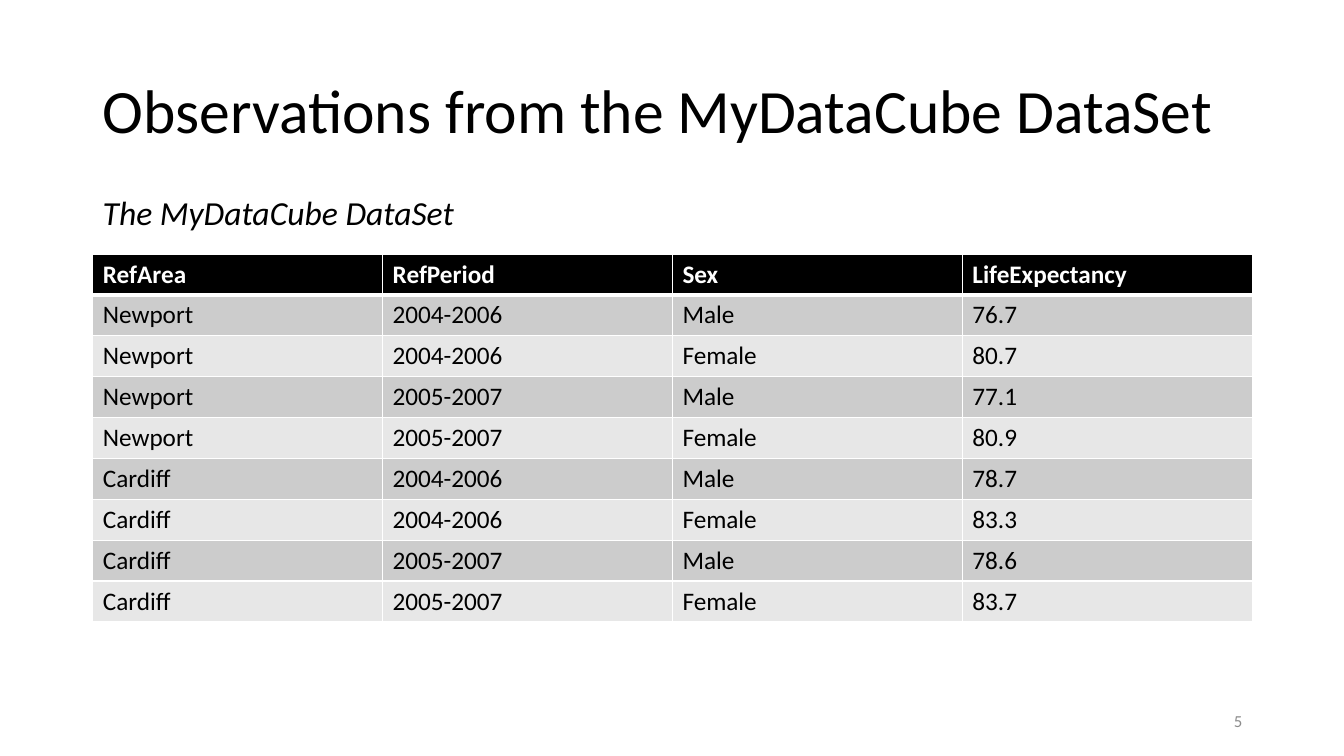
from dataclasses import dataclass
from itertools import product

from lxml.etree import SubElement as Sub
from pptx import Presentation
from pptx.dml.color import RGBColor as Rgb
from pptx.enum.text import MSO_ANCHOR as Anchor, PP_ALIGN as Align
from pptx.oxml.ns import qn
from pptx.util import Inches, Pt


@dataclass(frozen=True)
class Theme:
    font: str = "Calibri"
    ink: str = "000000"
    paper: str = "FFFFFF"
    dark: str = "CCCCCC"
    light: str = "E7E7E7"
    muted: str = "8C8C8C"
    title: int = 44
    lead: int = 24
    body: int = 18
    small: int = 12
    thin: int = 1
    thick: int = 3


HEAD = ("RefArea", "RefPeriod", "Sex", "LifeExpectancy")
AREAS = ("Newport", "Cardiff")
SPANS = ("2004-2006", "2005-2007")
SEXES = ("Male", "Female")
YEARS = ("76.7", "80.7", "77.1", "80.9", "78.7", "83.3", "78.6", "83.7")


def write(frame, text, *, theme, size, color, bold=False, italic=False,
          align=Align.LEFT, space=None):
    para = frame.paragraphs[0]
    para.alignment = align
    para.line_spacing = space
    run = para.add_run()
    run.text = text
    font = run.font
    font.name, font.size = theme.font, Pt(size)
    font.bold, font.italic = bold, italic
    font.color.rgb = Rgb.from_string(color)


def edge(cell, side, color, width):
    """Draw one border; call before the cell is filled, in the order L, R, T, B."""
    props = cell._tc.get_or_add_tcPr()
    line = Sub(props, qn(f"a:ln{side}"), w=str(Pt(width)))
    fill = Sub(line, qn("a:solidFill"))
    Sub(fill, qn("a:srgbClr"), val=color)


class Page:
    def __init__(self, deck, theme):
        self.theme = theme
        self.slide = deck.slides.add_slide(deck.slide_layouts[6])

    def text(self, text, box, *, anchor=Anchor.TOP, wrap=True, **style):
        shape = self.slide.shapes.add_textbox(*map(Inches, box))
        frame = shape.text_frame
        frame.word_wrap = wrap
        frame.vertical_anchor = anchor
        write(frame, text, theme=self.theme, **style)

    def table(self, rows, box):
        shape = self.slide.shapes.add_table(
            len(rows), len(rows[0]), *map(Inches, box))
        grid = shape.table
        for row in grid.rows:
            row.height = Inches(box[3] / len(rows))
        for r, row in enumerate(rows):
            for c, text in enumerate(row):
                self.cell(grid.cell(r, c), text, r)

    def cell(self, cell, text, row):
        theme = self.theme
        head = row == 0
        top = theme.thick if row == 1 else theme.thin
        base = theme.thick if head else theme.thin
        for side, width in zip("LRTB", (theme.thin, theme.thin, top, base)):
            edge(cell, side, theme.paper, width)
        band = theme.dark if row % 2 else theme.light
        cell.fill.solid()
        cell.fill.fore_color.rgb = Rgb.from_string(theme.ink if head else band)
        write(cell.text_frame, text, theme=theme, size=theme.body,
              color=theme.paper if head else theme.ink, bold=head)


def main():
    deck = Presentation()
    deck.slide_width, deck.slide_height = Inches(13.33), Inches(7.5)
    theme = Theme()
    page = Page(deck, theme)
    left, width = 0.92, 11.5

    page.text("Observations from the MyDataCube DataSet",
              (left, 0.4, width, 1.45), anchor=Anchor.MIDDLE,
              size=theme.title, color=theme.ink, space=0.9)
    keys = product(AREAS, SPANS, SEXES)
    rows = [HEAD] + [(*key, years) for key, years in zip(keys, YEARS)]
    page.table(rows, (left, 2.52, width, 3.65))
    page.text("5", (left + width - 3, 6.95, 3, 0.4), anchor=Anchor.MIDDLE,
              size=theme.small, color=theme.muted, align=Align.RIGHT)
    page.text("The MyDataCube DataSet", (left, 1.85, 3.72, 0.5), wrap=False,
              size=theme.lead, color=theme.ink, italic=True)
    deck.save("out.pptx")


if __name__ == "__main__":
    main()
